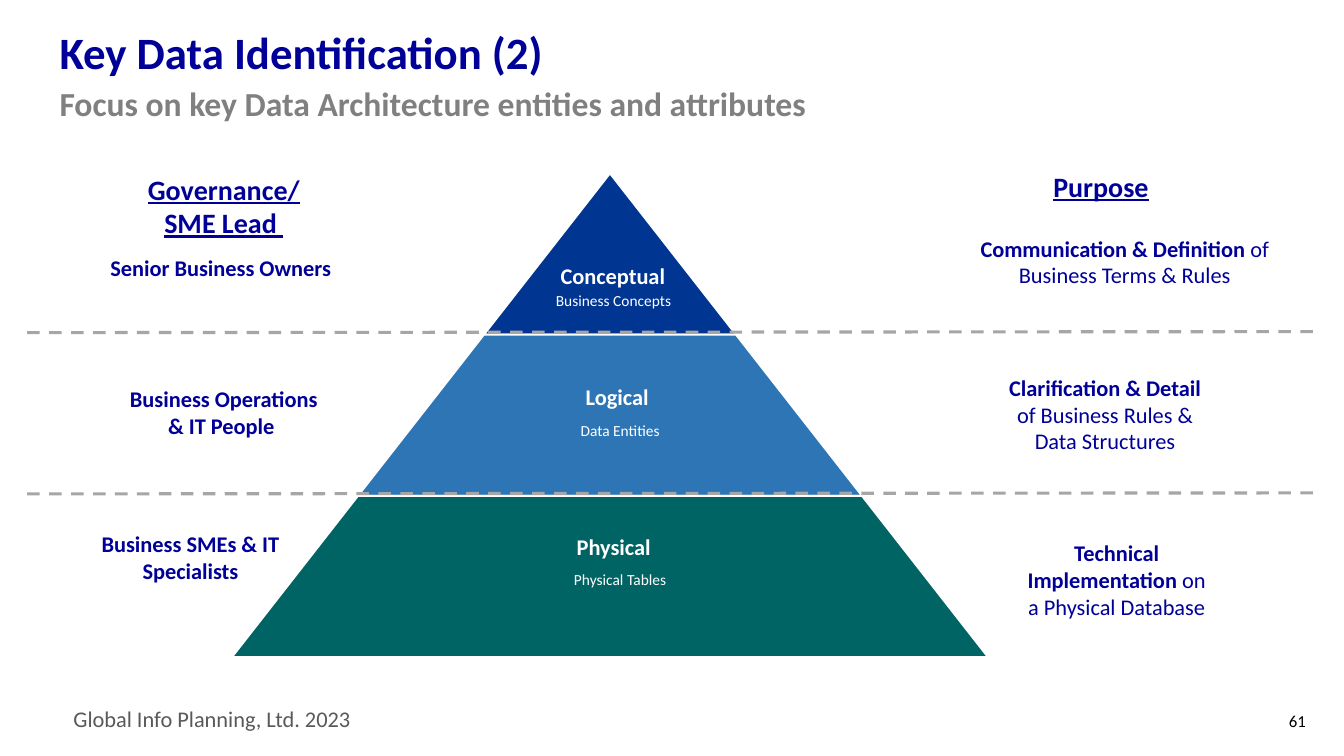
import pptx
import pptx.util
import pptx.dml.color
import pptx.enum.dml
import pptx.enum.shapes
import pptx.enum.text
import pptx.oxml.ns
import lxml.etree

Inches = pptx.util.Inches
ALIGN = pptx.enum.text.PP_ALIGN
ANCHOR = pptx.enum.text.MSO_ANCHOR
NAVY, GREY, WHITE = "000099", "808080", "FFFFFF"

TITLE = "Key Data Identification (2)"
SUBTITLE = "Focus on key Data Architecture entities and attributes"
FOOTER = "Global Info Planning, Ltd. 2023"
PAGE = "61"

# name, (left, drop), caption, (left, width, drop), fill
TIERS = [
    ("Conceptual", (5.56, 0.85), "Business Concepts", (5.04, 2.09, 1.12), "003591"),
    ("Logical", (5.81, 0.45), "Data Entities", (4.64, 3.02, 0.81), "2E75B6"),
    ("Physical", (5.72, 0.33), "Physical Tables", (4.64, 3.02, 0.69), "006464"),
]
HEADINGS = [
    ("Governance/ SME Lead ", (1.3, 1.66, 1.84, 0.77)),
    ("Purpose", (10.27, 1.63, 1.3, 0.44)),
]
LEADS = [
    ("Senior Business Owners ", (0.62, 2.47, 3.19, 0.37)),
    ("Business Operations & IT People ", (1.1, 3.77, 2.24, 0.64)),
    ("Business SMEs & IT Specialists", (0.77, 5.21, 2.24, 0.64)),
]
PURPOSES = [
    ("Communication & Definition ", "of Business Terms & Rules", (9.56, 2.28, 3.19, 0.64)),
    ("Clarification & Detail ", "of Business Rules & Data Structures", (9.84, 3.66, 2.24, 0.91)),
    ("Technical Implementation", " on a Physical Database", (10.05, 5.3, 2.05, 0.91)),
]

APEX_X, APEX_Y = 6.05, 1.72
TIER_HEIGHT, TIER_STEP = 1.6, 2.5
DIVIDER_LEFT, DIVIDER_RIGHT = 0.27, 13.06


def rgb(code):
    return pptx.dml.color.RGBColor.from_string(code)


def style(paragraph, size, color, bold=None, align=ALIGN.LEFT):
    paragraph.alignment = align
    font = paragraph.font
    font.name, font.size, font.bold = "Calibri", pptx.util.Pt(size), bold
    font.color.rgb = rgb(color)


def place(shape, box):
    shape.left, shape.top, shape.width, shape.height = map(Inches, box)


def add_label(slide, text, box, size, color, bold=None, align=ALIGN.CENTER):
    label = slide.shapes.add_textbox(*map(Inches, box))
    label.text_frame.word_wrap = True
    paragraph = label.text_frame.paragraphs[0]
    paragraph.add_run().text = text
    style(paragraph, size, color, bold, align)
    return label.text_frame


def fill_placeholder(holder, text, box, size, color, anchor):
    place(holder, box)
    frame = holder.text_frame
    frame.text = text
    frame.auto_size = pptx.enum.text.MSO_AUTO_SIZE.NONE
    frame.vertical_anchor = anchor
    paragraph = frame.paragraphs[0]
    paragraph.space_before = pptx.util.Pt(0)
    return paragraph, size, color


def add_tier(slide, row, fill):
    width = TIER_STEP * (row + 1)
    box = (APEX_X - width / 2, APEX_Y + row * TIER_HEIGHT, width, TIER_HEIGHT)
    tier = slide.shapes.add_shape(pptx.enum.shapes.MSO_SHAPE.TRAPEZOID, *map(Inches, box))
    tier.adjustments[0] = TIER_STEP / 2 / TIER_HEIGHT
    tier.shadow.inherit = False
    tier.fill.solid()
    tier.fill.fore_color.rgb = rgb(fill)
    tier.line.color.rgb = rgb(WHITE)
    tier.line.width = pptx.util.Pt(1.35)


def add_divider(slide, row):
    y = APEX_Y + row * TIER_HEIGHT - 0.02
    divider = slide.shapes.add_connector(
        pptx.enum.shapes.MSO_CONNECTOR.STRAIGHT,
        *map(Inches, (DIVIDER_LEFT, y, DIVIDER_RIGHT, y - 0.01)))
    divider.line.color.rgb = rgb("A6A6A6")
    divider.line.width = pptx.util.Pt(2.25)
    divider.line.dash_style = pptx.enum.dml.MSO_LINE.DASH
    lxml.etree.SubElement(divider._element.spPr, pptx.oxml.ns.qn("a:effectLst"))


def main():
    deck = pptx.Presentation()
    deck.slide_width, deck.slide_height = Inches(13.33), Inches(7.5)
    slide = deck.slides.add_slide(deck.slide_layouts[1])

    heading = fill_placeholder(slide.shapes.title, TITLE, (0.49, 0.12, 11.5, 0.86),
                               32, NAVY, ANCHOR.MIDDLE)
    heading[0].line_spacing = 0.9
    style(*heading, bold=True)

    subheading = fill_placeholder(slide.placeholders[1], SUBTITLE, (0.49, 0.77, 11.53, 0.71),
                                  24, GREY, ANCHOR.TOP)
    properties = subheading[0]._p.get_or_add_pPr()
    properties.set("marL", "0")
    properties.set("indent", "0")
    lxml.etree.SubElement(properties, pptx.oxml.ns.qn("a:buNone"))
    style(*subheading, bold=True)

    for row, tier in enumerate(TIERS):
        add_tier(slide, row, tier[-1])

    for row, (name, (left, drop), caption, (cap_left, cap_width, cap_drop), _) in enumerate(TIERS):
        top = APEX_Y + row * TIER_HEIGHT
        frame = add_label(slide, name, (left, top + drop, 1.26, 0.27), 16, WHITE, True, ALIGN.LEFT)
        frame.margin_left = frame.margin_right = frame.margin_top = frame.margin_bottom = 0
        frame.paragraphs[0].line_spacing = 1.13
        add_label(slide, caption, (cap_left, top + cap_drop, cap_width, 0.29), 11, WHITE)

    for text, box in HEADINGS:
        add_label(slide, text, box, 20, NAVY, True).paragraphs[0].font.underline = True
    for text, box in LEADS:
        add_label(slide, text, box, 16, NAVY, True)
    for strong, rest, box in PURPOSES:
        paragraph = add_label(slide, strong, box, 16, NAVY).paragraphs[0]
        paragraph.runs[0].font.bold = True
        paragraph.add_run().text = rest

    for row in range(1, len(TIERS)):
        add_divider(slide, row)

    add_label(slide, FOOTER, (0.63, 6.95, 3.62, 0.37), 16, "595959", align=ALIGN.LEFT)
    number = add_label(slide, PAGE, (12.42, 6.95, 0.63, 0.4), 12, "000000", align=ALIGN.RIGHT)
    number.vertical_anchor = ANCHOR.MIDDLE

    deck.save("out.pptx")


if __name__ == "__main__":
    main()
